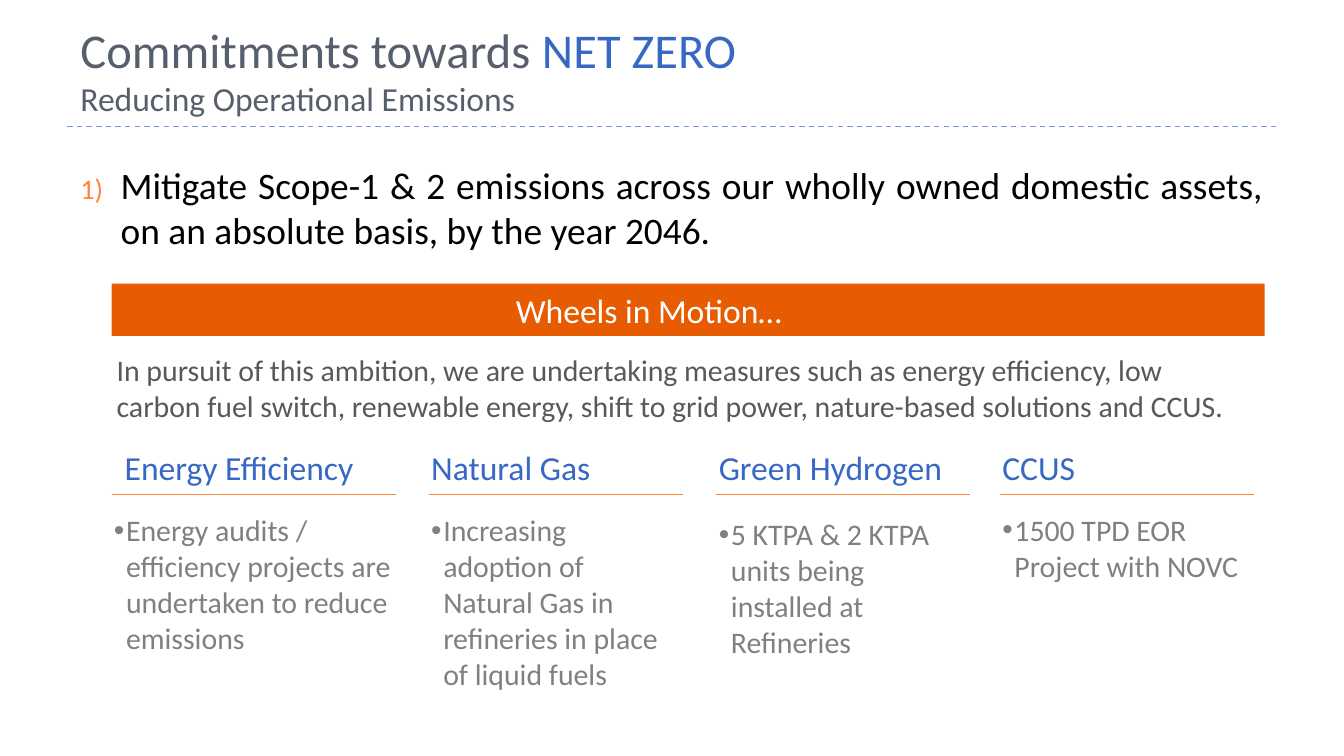
from dataclasses import dataclass

from lxml import etree
from pptx import Presentation
from pptx import util as u
from pptx.dml.color import RGBColor
from pptx.enum import dml, shapes, text
from pptx.oxml.ns import qn


@dataclass(frozen=True)
class Theme:
    font: str = "Calibri"
    bullet_font: str = "Arial"
    slate: str = "575F6D"
    blue: str = "3668C4"
    orange: str = "FE8637"
    banner: str = "E75C01"
    dash: str = "7598D9"
    black: str = "000000"
    white: str = "FFFFFF"
    dark: str = "595959"
    grey: str = "808080"
    title: int = 26
    lead: int = 20
    heading: int = 18
    body: int = 16


T = Theme()
GROW = {"auto_size": text.MSO_AUTO_SIZE.SHAPE_TO_FIT_TEXT}

# Heading, its left and width, bullet box, bullet, rule start and end
COLUMNS = [
    ("Energy Efficiency", 0.83, 2.44, (0.75, 3.76, 2.36, 1.18),
     "Energy audits / efficiency projects are undertaken to reduce emissions", 0.83, 2.95),
    ("Natural Gas", 3.11, 2.2, (3.11, 3.76, 2.05, 1.18),
     "Increasing adoption of Natural Gas in refineries in place of liquid fuels", 3.19, 5.08),
    ("Green Hydrogen", 5.25, 2.27, (5.25, 3.79, 2.05, 1.18),
     "5 KTPA & 2 KTPA units being installed at Refineries", 5.33, 7.22),
    ("CCUS", 7.36, 2.36, (7.36, 3.76, 2.2, 0.64),
     "1500 TPD EOR Project with NOVC", 7.44, 9.33),
]


def apply(obj, formats):
    for name, value in formats.items():
        setattr(obj, name, value)


def add_run(p, words, size, color):
    r = p.add_run()
    r.text = words
    apply(r.font, {"name": T.font, "size": u.Pt(size)})
    r.font.color.rgb = RGBColor.from_string(color)


def add_text(slide, box, runs, frame=None, para=None):
    """Add a wrapped text box; a run of None is a line break."""
    tf = slide.shapes.add_textbox(*map(u.Inches, box)).text_frame
    apply(tf, {"word_wrap": True, **(frame or {})})
    p = tf.paragraphs[0]
    apply(p, para or {})
    for run in runs:
        if run is None:
            p.add_line_break()
        else:
            add_run(p, *run)
    return p


def add_bullet(p, indent, tag, attrs, color=None, percent=None):
    pPr = p._p.get_or_add_pPr()
    pPr.set("marL", str(u.Inches(indent)))
    pPr.set("indent", str(-u.Inches(indent)))
    if color:
        clr = etree.SubElement(pPr, qn("a:buClr"))
        etree.SubElement(clr, qn("a:srgbClr"), val=color)
    if percent:
        etree.SubElement(pPr, qn("a:buSzPct"), val=str(percent * 1000))
    if tag == "a:buChar":
        etree.SubElement(pPr, qn("a:buFont"), typeface=T.bullet_font)
    etree.SubElement(pPr, qn(tag), **attrs)


def add_rule(slide, x1, x2, y, color, dash=None):
    line = slide.shapes.add_connector(
        shapes.MSO_CONNECTOR.STRAIGHT, *map(u.Inches, (x1, y, x2, y)))
    line.line.color.rgb = RGBColor.from_string(color)
    apply(line.line, {"width": u.Pt(0.75), "dash_style": dash})
    etree.SubElement(line._element.spPr, qn("a:effectLst"))


def add_banner(slide, box):
    sp = slide.shapes.add_shape(shapes.MSO_SHAPE.RECTANGLE, *map(u.Inches, box))
    sp.shadow.inherit = False
    sp.fill.solid()
    sp.fill.fore_color.rgb = RGBColor.from_string(T.banner)
    sp.line.fill.background()


def add_column(slide, heading, left, width, bullet_box, bullet, start, end):
    add_text(slide, (left, 3.28, width, 0.4), [(heading, T.heading, T.blue)], GROW)
    p = add_text(slide, bullet_box, [(bullet, T.body, T.grey)], GROW)
    add_bullet(p, 0.09, "a:buChar", {"char": "•"})
    add_rule(slide, start, end, 3.68, T.orange)


def main():
    # Widescreen page, 16 by 9
    prs = Presentation()
    apply(prs, {"slide_width": u.Inches(10), "slide_height": u.Inches(10 * 9 / 16)})
    slide = prs.slides.add_slide(prs.slide_layouts[6])

    # Title and dashed rule
    add_rule(slide, 0.5, 9.5, 0.94, T.dash, dml.MSO_LINE.DASH)
    add_text(slide, (0.5, 0.12, 6.78, 0.81),
             [("Commitments towards ", T.title, T.slate),
              ("NET ZERO", T.title, T.blue),
              None,
              ("Reducing Operational Emissions", T.heading, T.slate)],
             frame={"vertical_anchor": text.MSO_ANCHOR.BOTTOM})

    # Numbered commitment
    p = add_text(slide, (0.5, 1.16, 9, 0.81),
                 [("Mitigate Scope-1 & 2 emissions across our wholly owned domestic "
                   "assets, on an absolute basis, by the year 2046. ", T.lead, T.black)],
                 para={"alignment": text.PP_ALIGN.JUSTIFY, "space_after": u.Pt(12)})
    add_bullet(p, 0.3, "a:buAutoNum", {"type": "arabicParenR"}, T.orange, 76)

    # Banner and introduction
    add_banner(slide, (0.83, 2.11, 8.58, 0.39))
    add_text(slide, (3.74, 2.11, 2.3, 0.4),
             [("Wheels in Motion…", T.heading, T.white)], GROW)
    add_text(slide, (0.77, 2.57, 8.64, 0.64),
             [("In pursuit of this ambition, we are undertaking measures such as energy "
               "efficiency, low carbon fuel switch, renewable energy, shift to grid power, "
               "nature-based solutions and CCUS.", T.body, T.dark)], GROW)

    # Four measures
    for column in COLUMNS:
        add_column(slide, *column)

    prs.save("out.pptx")


if __name__ == "__main__":
    main()
